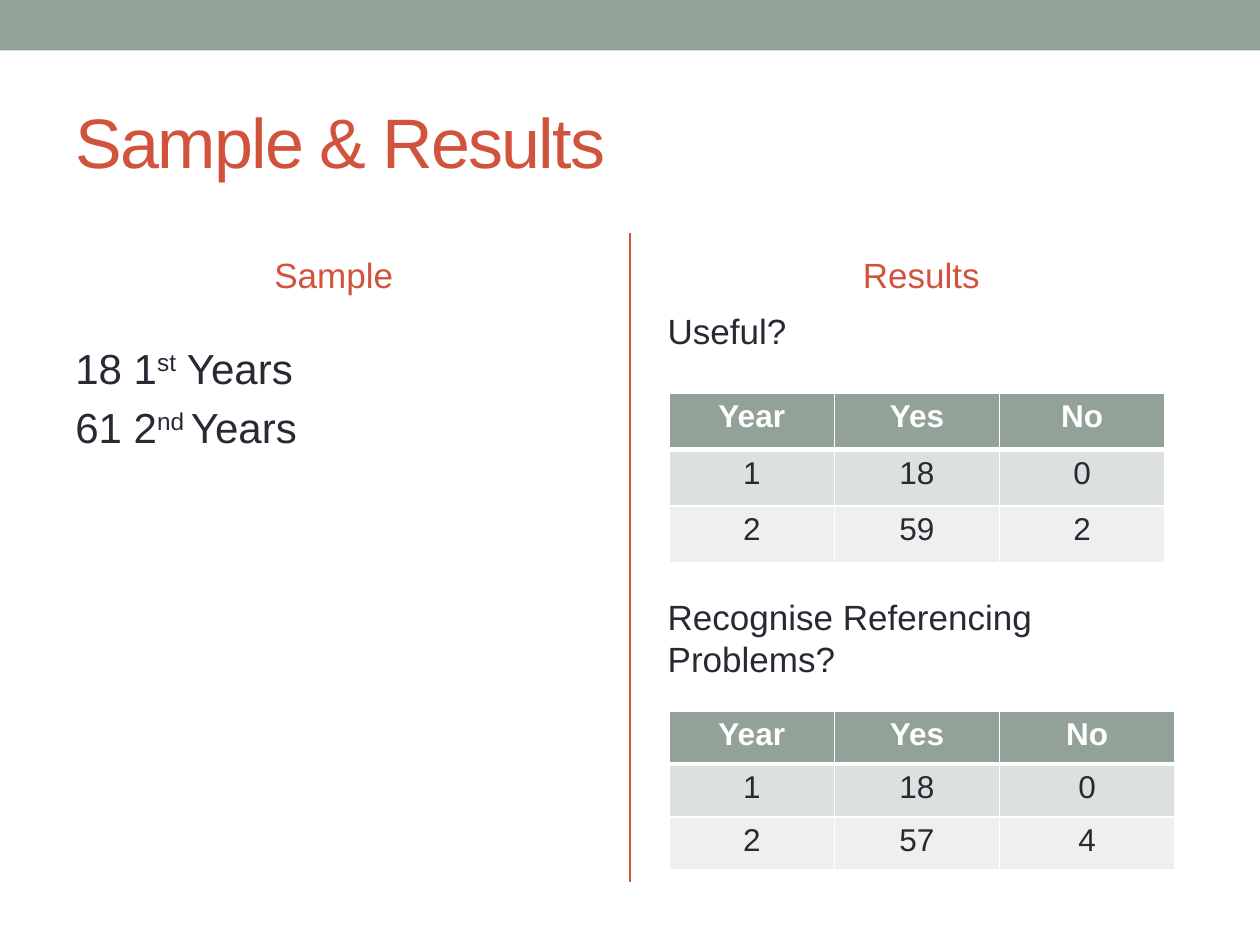
from itertools import product

from lxml import etree
from pptx import Presentation
from pptx.dml.color import RGBColor
from pptx.enum import shapes, text
from pptx.oxml import parse_xml
from pptx.oxml.ns import nsdecls, qn
from pptx.util import Cm, Pt

THEME = {
    "font": "Arial",
    "sage": "93A299", "rust": "D2533C", "ink": "292934", "white": "FFFFFF",
    "bands": ("DCE0DE", "EEF0EF"),
    "title": 40, "list": 24, "body": 20, "cell": 18,
}

# Texts: each paragraph is a list of (words, raised) runs.
TITLE = [[("Sample & Results", False)]]
HEADS = ["Sample", "Results "]
YEARS = [
    [("18 1", False), ("st", True), (" Years", False)],
    [("61 2", False), ("nd ", True), ("Years", False)],
]
ASKED = [[("Useful?", False)], [("Recognise Referencing Problems?", False)]]
LABELS = ("Year", "Yes", "No")
# Tables: top, column widths and row height in cm, then the answers.
TABLES = [
    (7.92, (3.33, 3.33, 3.33), 1.14, [(1, 18, 0), (2, 59, 2)]),
    (14.33, (3.33, 3.33, 3.53), 1.07, [(1, 18, 0), (2, 57, 4)]),
]

WIDE, HIGH = 25.4, 19.05
LEFT, RIGHT, COL = 1.27, 13.21, 10.92
GRID = 13.49
ASK_GAP = 139

CENTER = text.PP_ALIGN.CENTER
MIDDLE, TOP = text.MSO_ANCHOR.MIDDLE, text.MSO_ANCHOR.TOP


def rgb(name):
    return RGBColor.from_string(THEME.get(name, name))


def apply(item, form):
    for key, value in form.items():
        setattr(item, key, value)


def write(frame, paras, size, color, bold=False, align=text.PP_ALIGN.LEFT,
          gap=0, track=None):
    """Fill a frame; gap is the space before each paragraph in points."""
    for i, runs in enumerate(paras):
        para = frame.paragraphs[0] if i == 0 else frame.add_paragraph()
        apply(para, {"alignment": align, "space_before": Pt(gap if i else size * 0.2)})
        for words, raised in runs:
            run = para.add_run()
            run.text = words
            apply(run.font, {"name": THEME["font"], "size": Pt(size), "bold": bold})
            run.font.color.rgb = rgb(color)
            if raised:
                run.font._element.set("baseline", "30000")
            if track:
                run.font._element.set("spc", str(track))


def box(slide, left, top, high, paras, size, color, anchor=TOP, **form):
    frame = slide.shapes.add_textbox(Cm(left), Cm(top), Cm(COL), Cm(high)).text_frame
    apply(frame, {"word_wrap": True, "vertical_anchor": anchor})
    write(frame, paras, size, color, **form)


def edge(cell, widths):
    """Draw white cell borders, with widths in points by side."""
    props = cell._tc.get_or_add_tcPr()
    for side, width in widths.items():
        props.append(parse_xml(
            f'<a:ln{side} {nsdecls("a")} w="{Pt(width)}"><a:solidFill>'
            f'<a:srgbClr val="{THEME["white"]}"/></a:solidFill></a:ln{side}>'))


def grid(slide, top, widths, row, data):
    rows = [LABELS, *data]
    table = slide.shapes.add_table(
        len(rows), len(widths), Cm(GRID), Cm(top),
        Cm(sum(widths)), Cm(row * len(rows))).table
    for col, width in zip(table.columns, widths):
        col.width = Cm(width)
    fills = (THEME["sage"], *THEME["bands"])
    for r, c in product(range(len(rows)), range(len(widths))):
        cell, head = table.cell(r, c), r == 0
        edge(cell, {"L": 1, "R": 1, "T": 3 if r == 1 else 1, "B": 3 if head else 1})
        cell.fill.solid()
        cell.fill.fore_color.rgb = rgb(fills[r])
        write(cell.text_frame, [[(str(rows[r][c]), False)]], THEME["cell"],
              "white" if head else "ink", bold=head, align=CENTER)
        cell.text_frame.paragraphs[0].space_before = Pt(0)


def main():
    deck = Presentation()
    apply(deck, {"slide_width": Cm(WIDE), "slide_height": Cm(HIGH)})
    slide = deck.slides.add_slide(deck.slide_layouts[5])

    band = slide.shapes.add_shape(
        shapes.MSO_SHAPE.RECTANGLE, 0, 0, Cm(WIDE), Cm(1.02))
    band.shadow.inherit = False
    band.fill.solid()
    band.fill.fore_color.rgb = rgb("sage")
    band.line.fill.background()

    rule = slide.shapes.add_connector(
        shapes.MSO_CONNECTOR.STRAIGHT, Cm(WIDE / 2), Cm(4.7), Cm(WIDE / 2), Cm(17.78))
    rule.line.color.rgb = rgb("rust")
    rule.line.width = Pt(1.5)
    etree.SubElement(rule._element.spPr, qn("a:effectLst"))

    title = slide.shapes.title
    apply(title, {"left": Cm(LEFT), "top": Cm(1.47),
                  "width": Cm(WIDE - 2 * LEFT), "height": Cm(2.74)})
    apply(title.text_frame, {"vertical_anchor": MIDDLE, "word_wrap": True})
    write(title.text_frame, TITLE, THEME["title"], "rust", track=-100)
    title.text_frame.paragraphs[0].space_before = Pt(0)

    for left, head in zip((LEFT, RIGHT), HEADS):
        box(slide, left, 4.65, 1.78, [[(head, False)]], THEME["body"], "rust",
            anchor=MIDDLE, align=CENTER)
    box(slide, LEFT, 6.78, 10.97, YEARS, THEME["list"], "ink", gap=4.8)
    box(slide, RIGHT, 6.12, 11.63, ASKED, THEME["body"], "ink", gap=ASK_GAP)
    for spec in TABLES:
        grid(slide, *spec)

    deck.save("out.pptx")


if __name__ == "__main__":
    main()
